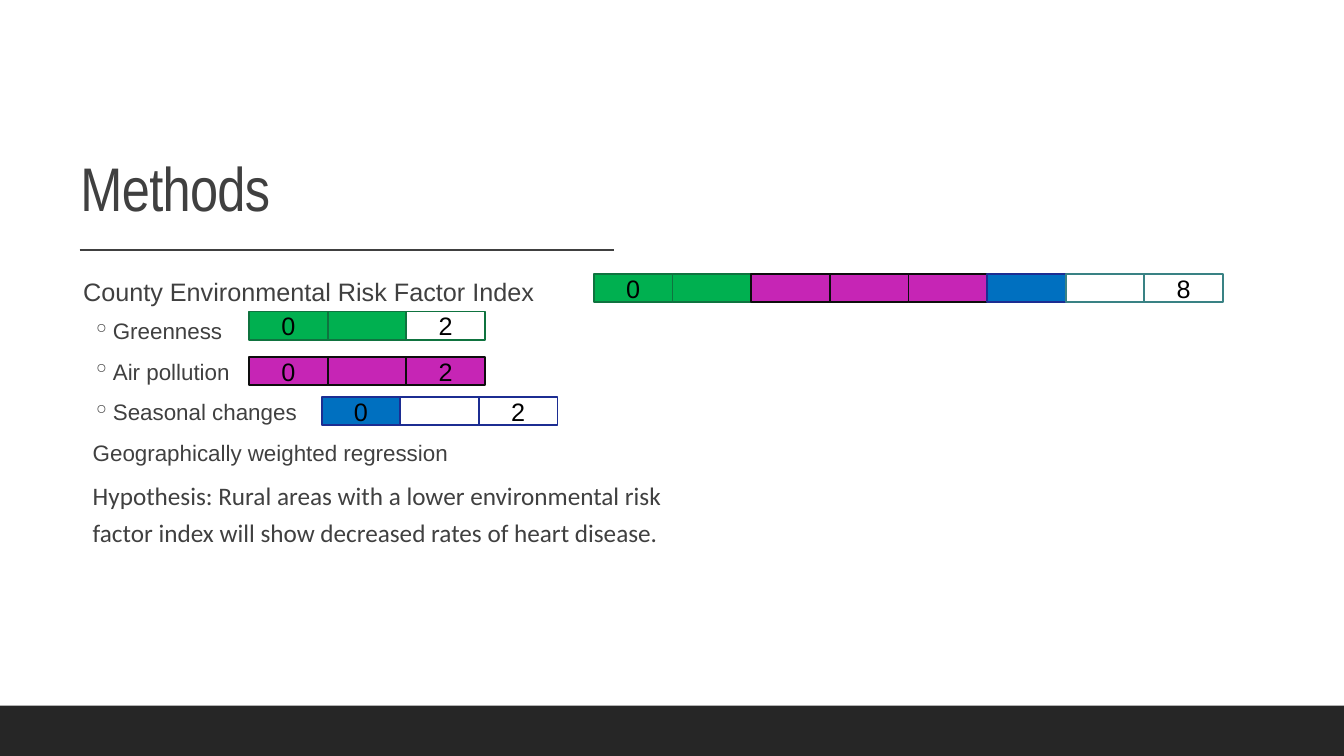
import pptx
import pptx.util
import pptx.dml.color
import pptx.enum.shapes
import pptx.enum.text
import pptx.oxml
import pptx.oxml.ns
import lxml.etree

Inches = pptx.util.Inches
Pt = pptx.util.Pt
RGBColor = pptx.dml.color.RGBColor
ANCHOR = pptx.enum.text.MSO_ANCHOR
RECT = pptx.enum.shapes.MSO_SHAPE.RECTANGLE

WHITE = RGBColor(0xFF, 0xFF, 0xFF)
BLACK = RGBColor(0, 0, 0)
GREY = RGBColor(0x40, 0x40, 0x40)
DARK = RGBColor(0x26, 0x26, 0x26)
GREEN = RGBColor(0x00, 0xB0, 0x50)
FOREST = RGBColor(0x0F, 0x73, 0x3F)
PURPLE = RGBColor(0xC6, 0x25, 0xB5)
INK = RGBColor(0x0D, 0x0D, 0x0D)
BLUE = RGBColor(0x00, 0x70, 0xC0)
NAVY = RGBColor(0x1C, 0x2D, 0x92)
TEAL = RGBColor(0x39, 0x82, 0x84)

CELL_W, CELL_H = 0.78, 0.28

# text, font, size, level, left margin, indent, bullet, space before, space after
POINTS = [
    ("County Environmental Risk Factor Index", "Arial", 18, 0, 0.1, -0.1, " ", 12, 2),
    ("Greenness", "Arial", 16, 1, 0.42, -0.2, "◦", 2, 4),
    ("Air pollution", "Arial", 16, 1, 0.42, -0.2, "◦", 2, 4),
    ("Seasonal changes", "Arial", 16, 1, 0.42, -0.2, "◦", 2, 4),
    ("Geographically weighted regression", "Arial", 16, 1, 0.22, 0, None, 2, 4),
    ("Hypothesis: Rural areas with a lower environmental risk factor index "
     "will show decreased rates of heart disease.",
     "Calibri", 18, 1, 0.22, 0, None, 2, 4),
]

# left, top, cells as (fill, line), first label, last label
SCALES = [
    (5.89, 2.72, [(GREEN, FOREST)] * 2 + [(PURPLE, INK)] * 3
     + [(BLUE, NAVY)] + [(WHITE, TEAL)] * 2, "0", "8"),
    (2.47, 3.09, [(GREEN, FOREST)] * 2 + [(WHITE, FOREST)], "0", "2"),
    (2.47, 3.54, [(PURPLE, INK)] * 3, "0", "2"),
    (3.19, 3.94, [(BLUE, NAVY)] + [(WHITE, NAVY)] * 2, "0", "2"),
]


def add_run(para, text, font, size, color):
    run = para.add_run()
    run.text = text
    run.font.name = font
    run.font.size = Pt(size)
    run.font.color.rgb = color
    return run


def add_rect(slide, left, top, width, height, fill, line=None):
    rect = slide.shapes.add_shape(
        RECT, Inches(left), Inches(top), Inches(width), Inches(height))
    rect.shadow.inherit = False
    rect.fill.solid()
    rect.fill.fore_color.rgb = fill
    if line is None:
        rect.line.fill.background()
    else:
        rect.line.color.rgb = line
        rect.line.width = Pt(1.25)
    return rect


def add_title(slide, left, top, width, height):
    """Place the heading, with a rule under it."""
    box = slide.shapes.add_textbox(
        Inches(left), Inches(top), Inches(width), Inches(height))
    frame = box.text_frame
    frame.word_wrap = True
    frame.vertical_anchor = ANCHOR.BOTTOM
    para = frame.paragraphs[0]
    para.line_spacing = 0.9
    run = add_run(para, "Methods", "Arial Narrow", 44, GREY)
    run.font._element.set("spc", "-50")

    start, level = left + 0.09, top + height + 0.2
    rule = slide.shapes.add_connector(
        pptx.enum.shapes.MSO_CONNECTOR.STRAIGHT,
        Inches(start), Inches(level), Inches(start + 5.3), Inches(level))
    rule.line.color.rgb = GREY
    rule.line.width = Pt(1)
    lxml.etree.SubElement(
        rule._element.spPr, pptx.oxml.ns.qn("a:effectLst"))


def set_indent(para, margin, indent, bullet):
    props = para._p.get_or_add_pPr()
    props.set("marL", str(Inches(margin)))
    props.set("indent", str(Inches(indent)))
    if bullet:
        color = lxml.etree.SubElement(props, pptx.oxml.ns.qn("a:buClr"))
        lxml.etree.SubElement(
            color, pptx.oxml.ns.qn("a:srgbClr"), val=str(GREY))
        mark = lxml.etree.SubElement(props, pptx.oxml.ns.qn("a:buChar"))
        mark.set("char", bullet)


def add_body(slide, left, top, width, height):
    box = slide.shapes.add_textbox(
        Inches(left), Inches(top), Inches(width), Inches(height))
    frame = box.text_frame
    frame.word_wrap = True
    frame.margin_left = frame.margin_right = 0
    for i, point in enumerate(POINTS):
        text, font, size, level, margin, indent, bullet, before, after = point
        para = frame.add_paragraph() if i else frame.paragraphs[0]
        para.level = level
        para.line_spacing = 1.2
        para.space_before = Pt(before)
        para.space_after = Pt(after)
        set_indent(para, margin, indent, bullet)
        add_run(para, text, font, size, GREY)


def add_scale(slide, left, top, cells, first, last):
    """Draw a row of cells, with a number in the first and the last."""
    labels = {0: first, len(cells) - 1: last}
    for i, (fill, line) in enumerate(cells):
        cell = add_rect(
            slide, left + i * CELL_W, top, CELL_W, CELL_H, fill, line)
        if i in labels:
            frame = cell.text_frame
            frame.vertical_anchor = ANCHOR.MIDDLE
            para = frame.paragraphs[0]
            para.alignment = pptx.enum.text.PP_ALIGN.CENTER
            add_run(para, labels[i], "Arial", 18, BLACK)


def main():
    deck = pptx.Presentation()
    deck.slide_width = Inches(13.33)
    deck.slide_height = Inches(7.5)
    slide = deck.slides.add_slide(deck.slide_layouts[6])
    slide.background.fill.solid()
    slide.background.fill.fore_color.rgb = WHITE
    add_title(slide, 0.7, 0.69, 5.96, 1.59)
    add_body(slide, 0.7, 2.63, 5.96, 3.79)
    add_rect(slide, 0, 7, 13.33, 0.5, DARK)
    for scale in SCALES:
        add_scale(slide, *scale)
    deck.save("out.pptx")


if __name__ == "__main__":
    main()
